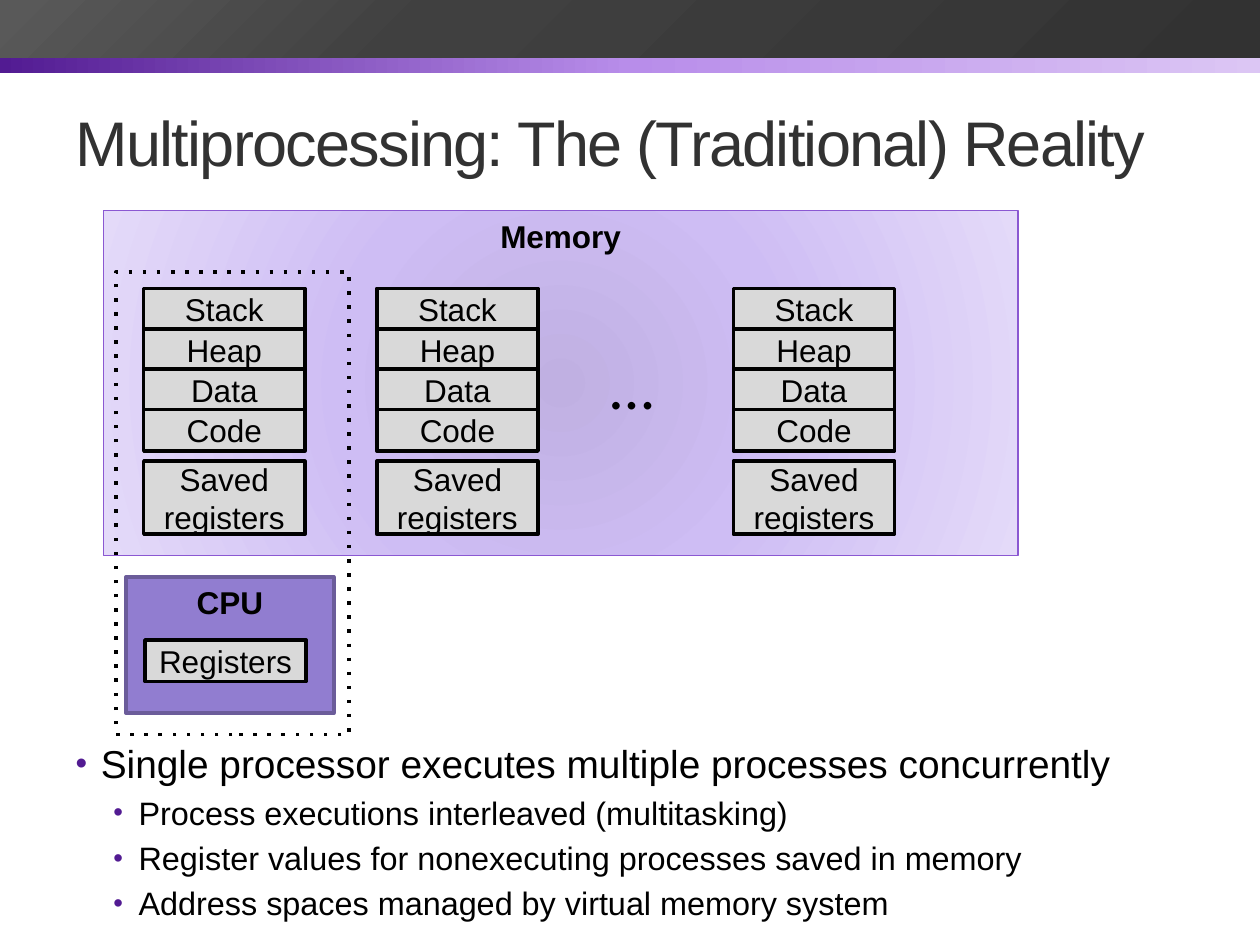
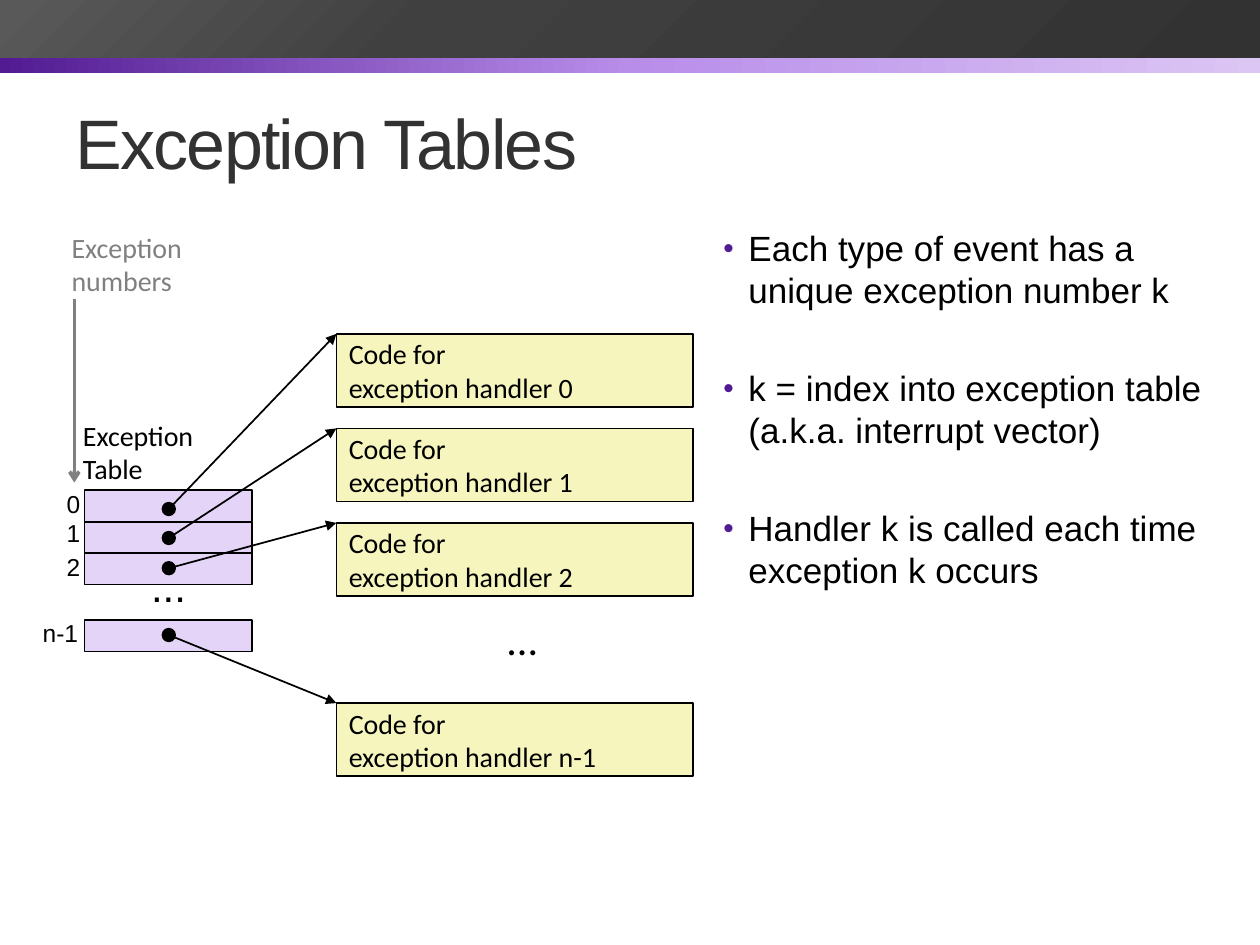
from dataclasses import dataclass

from lxml import etree
from pptx import Presentation
from pptx import util as u
from pptx.dml.color import RGBColor
from pptx.enum import shapes, text
from pptx.oxml import ns

PX = 9144
RECT = shapes.MSO_SHAPE.RECTANGLE
LEFT, CENTER = text.PP_ALIGN.LEFT, text.PP_ALIGN.CENTER
TOP, MIDDLE = text.MSO_ANCHOR.TOP, text.MSO_ANCHOR.MIDDLE


@dataclass(frozen=True)
class Theme:
    """Colours, fonts and type sizes of the deck."""
    sans: str = "Arial"
    humanist: str = "Calibri"
    ink: str = "000000"
    heading: str = "323232"
    bullet: str = "521B92"
    muted: str = "808080"
    segment: str = "D9D9D9"
    cpu: str = "917DD0"
    cpu_edge: str = "6B5C9A"
    memory_edge: str = "8B58D2"
    entry: str = "E4D4F7"
    handler: str = "F6F5BD"
    stripe_stops: tuple = ((0, "521B92"), (50, "B88DEA"), (100, "DCC6F4"))
    banner_stops: tuple = ((0, "323232"), (66, "404040"), (99, "595959"))
    memory_stops: tuple = ((0, "C0B0E2"), (45, "CEBDF4"), (100, "E4DAF9"))
    diagram: float = 18
    note: float = 16
    index: float = 14
    dots: float = 24
    big_dots: float = 36


T = Theme()


def px(*lengths):
    """Turn px lengths into EMU."""
    return [u.Emu(length * PX) for length in lengths]


def node(parent, tag, **attributes):
    """Append a DrawingML element."""
    return etree.SubElement(parent, ns.qn(f"a:{tag}"), **attributes)


def write(frame, content, size=T.diagram, font=T.sans, color=T.ink, bold=False,
          align=LEFT, anchor=TOP, wrap=True, grow=False):
    """Fill a text frame with one paragraph per line of content."""
    frame.text = content
    frame.word_wrap = wrap
    frame.vertical_anchor = anchor
    frame.auto_size = (text.MSO_AUTO_SIZE.SHAPE_TO_FIT_TEXT if grow
                       else text.MSO_AUTO_SIZE.NONE)
    for paragraph in frame.paragraphs:
        paragraph.alignment = align
        for run in paragraph.runs:
            run.font.size = u.Pt(size)
            run.font.name = font
            run.font.bold = bold
            run.font.color.rgb = RGBColor.from_string(color)


def label(slide, box, content, **style):
    """Add a text box that grows with its text."""
    write(slide.shapes.add_textbox(*px(*box)).text_frame, content, grow=True, **style)


def outline(line, color, width):
    """Give a line its colour and width."""
    line.color.rgb = RGBColor.from_string(color)
    line.width = u.Pt(width)


def block(slide, box, fill=None, edge=T.ink, width=2, kind=RECT, content="", **style):
    """Add a flat shape with optional fill, outline and text."""
    shape = slide.shapes.add_shape(kind, *px(*box))
    shape.shadow.inherit = False
    if isinstance(fill, str):
        shape.fill.solid()
        shape.fill.fore_color.rgb = RGBColor.from_string(fill)
    elif fill is None:
        shape.fill.background()
    else:
        gradient(shape, fill)
    if edge:
        outline(shape.line, edge, width)
    else:
        shape.line.fill.background()
    if content:
        write(shape.text_frame, content, **style)
    return shape


def gradient(shape, fill):
    """Fill a shape with (stops, angle), radial when the angle is None."""
    stops, angle = fill
    grad = etree.Element(ns.qn("a:gradFill"), rotWithShape="1")
    stop_list = node(grad, "gsLst")
    for position, color in stops:
        node(node(stop_list, "gs", pos=str(position * 1000)), "srgbClr", val=color)
    if angle is None:
        circle = node(grad, "path", path="circle")
        node(circle, "fillToRect", **dict.fromkeys("ltrb", "100000"))
    else:
        node(grad, "lin", ang=str(angle * 60000), scaled="0")
    shape.element.spPr.find(ns.qn("a:prstGeom")).addnext(grad)


def arrow(slide, start, end, color=T.ink, width=1, head="triangle"):
    """Draw a straight arrow between two points."""
    link = slide.shapes.add_connector(
        shapes.MSO_CONNECTOR.STRAIGHT, *px(*start, *end))
    outline(link.line, color, width)
    properties = link.element.spPr
    node(properties.find(ns.qn("a:ln")), "tailEnd", type=head)
    node(properties, "effectLst")


def add_bands(deck, slide):
    """Put the two top bands on the slide master."""
    bands = [block(slide, (0, 24, 1000, 34), (T.stripe_stops, 0), edge=None),
             block(slide, (0, 0, 1000, 46), (T.banner_stops, 225), edge=None)]
    for position, band in enumerate(bands):
        band.element.nvSpPr.cNvPr.set("id", str(100 + position))
        deck.slide_master.shapes.element.insert(2 + position, band.element)


def place(shape, box):
    """Move and size a placeholder."""
    shape.left, shape.top, shape.width, shape.height = px(*box)


def set_title(slide, content, size):
    """Format the title placeholder."""
    title = slide.shapes.title
    place(title, (50, 58, 900, 108))
    write(title.text_frame, content, size=size, color=T.heading, anchor=MIDDLE)
    for properties in title.element.iter(ns.qn("a:rPr")):
        properties.set("spc", "-100")


def set_points(slide, box, points, sizes, gap=0):
    """Fill the body placeholder with (level, sentence) bullets."""
    body = slide.placeholders[1]
    place(body, box)
    write(body.text_frame, "\n".join(sentence for _, sentence in points))
    for paragraph, (level, _) in zip(body.text_frame.paragraphs, points):
        size = sizes[level]
        paragraph.level = level
        paragraph.space_before = u.Pt(round(size * 0.2 + gap, 1))
        for run in paragraph.runs:
            run.font.size = u.Pt(size)
        properties = paragraph._p.get_or_add_pPr()
        properties.set("marL", str((20 + 30 * level) * PX))
        properties.set("indent", str(-20 * PX))
        node(node(properties, "buClr"), "srgbClr", val=T.bullet)
        node(properties, "buSzPct", val="85000")
        node(properties, "buFont", typeface=T.sans)
        node(properties, "buChar", char="•")


def segment(slide, box, content):
    """Add one grey storage box."""
    block(slide, box, T.segment, content=content, align=CENTER, anchor=MIDDLE)


def process_image(slide, x, y):
    """Stack the address space of one process above its saved registers."""
    for row, part in enumerate(("Stack", "Heap", "Data", "Code")):
        segment(slide, (x, y + 32 * row, 128, 33), part)
    segment(slide, (x, y + 137, 128, 58), "Saved registers")


def memory(slide, box):
    """Draw the memory with its processes."""
    x, y = box[:2]
    block(slide, box, (T.memory_stops, None), T.memory_edge, 0.75,
          content="Memory", bold=True, align=CENTER)
    for offset in (32, 217, 500):
        process_image(slide, x + offset, y + 62)
    label(slide, (x + 393, y + 103, 62, 71), "…", size=T.big_dots, font=T.humanist)


def processor(slide, box):
    """Draw the CPU with its registers."""
    x, y = box[:2]
    block(slide, box, T.cpu, T.cpu_edge, 2.08, content="CPU", bold=True, align=CENTER)
    segment(slide, (x + 15, y + 50, 128, 33), "Registers")


def running_process(slide, box):
    """Frame the process that owns the CPU with dots."""
    frame = block(slide, box)
    node(frame.element.spPr.find(ns.qn("a:ln")), "prstDash", val="dot")


def exception_table(slide, box):
    """Draw the table entries and return the centres of their dots."""
    x, y, width, height = box
    origins = []
    entries = (("0", 0, -6, 10), ("1", 25, 17, 33), ("2", 50, 44, 57),
               ("n-1", 103, 97, 110))
    for number, row, number_top, dot_top in entries:
        block(slide, (x, y + row, width, height), T.entry, width=1)
        left, number_width = (-43, 49) if len(number) > 1 else (-24, 31)
        label(slide, (x + left, y + number_top, number_width, 33), number,
              size=T.index, anchor=MIDDLE, wrap=False)
        block(slide, (x + 62, y + dot_top, 10, 10), T.ink, width=1,
              kind=shapes.MSO_SHAPE.OVAL)
        origins.append((x + 67, y + dot_top + 5))
    label(slide, (x + 43, y + 51, 48, 50), "...", size=T.dots,
          anchor=MIDDLE, wrap=False)
    label(slide, (x - 11, y - 62, 111, 64), "Exception\nTable", size=T.note,
          font=T.humanist, wrap=False)
    return origins


def handlers(slide, box, origins):
    """Draw the handlers and the arrows that reach them."""
    x, y, width, height = box
    for number, offset, origin in zip(("0", "1", "2", "n-1"), (0, 75, 150, 293), origins):
        block(slide, (x, y + offset, width, height), T.handler, width=0.75,
              content=f"Code for\nexception handler {number}", size=T.note,
              font=T.humanist, anchor=MIDDLE)
        arrow(slide, origin, (x, y + offset))
    label(slide, (x + 125, y + 217, 48, 50), "...", size=T.dots, font=T.humanist,
          anchor=MIDDLE, wrap=False)


def number_axis(slide, x, y):
    """Draw the exception numbers caption and its arrow."""
    label(slide, (x, y, 116, 64), "Exception\nnumbers", size=T.note,
          font=T.humanist, color=T.muted, wrap=False)
    arrow(slide, (x + 12, y + 59), (x + 12, y + 205), T.muted, 2, "arrow")


def multiprocessing_slide(slide):
    """Build the slide on traditional multiprocessing."""
    set_title(slide, "Multiprocessing: The (Traditional) Reality", 36)
    set_points(slide, (50, 582, 900, 168), (
        (0, "Single processor executes multiple processes concurrently"),
        (1, "Process executions interleaved (multitasking)"),
        (1, "Register values for nonexecuting processes saved in memory"),
        (1, "Address spaces managed by virtual memory system"),
    ), (22.2, 18.5))
    processor(slide, (100, 458, 165, 108))
    memory(slide, (82, 167, 726, 274))
    running_process(slide, (92, 216, 185, 367))


def exception_slide(slide):
    """Build the slide on exception tables."""
    set_title(slide, "Exception Tables", 40)
    set_points(slide, (564, 175, 411, 533), (
        (0, "Each type of event has a unique exception number k"),
        (0, "k = index into exception table (a.k.a. interrupt vector)"),
        (0, "Handler k is called each time exception k occurs"),
    ), (20,), gap=28)
    slide.placeholders[1].text_frame.paragraphs[0].space_before = u.Pt(4)
    origins = exception_table(slide, (67, 389, 133, 25))
    handlers(slide, (267, 265, 283, 58), origins)
    number_axis(slide, 47, 178)


def main():
    """Build and save the deck."""
    deck = Presentation()
    deck.slide_width, deck.slide_height = px(1000, 750)
    layout = deck.slide_layouts[1]
    first, second = (deck.slides.add_slide(layout) for _ in range(2))
    add_bands(deck, first)
    multiprocessing_slide(first)
    exception_slide(second)
    deck.save("out.pptx")


if __name__ == "__main__":
    main()
